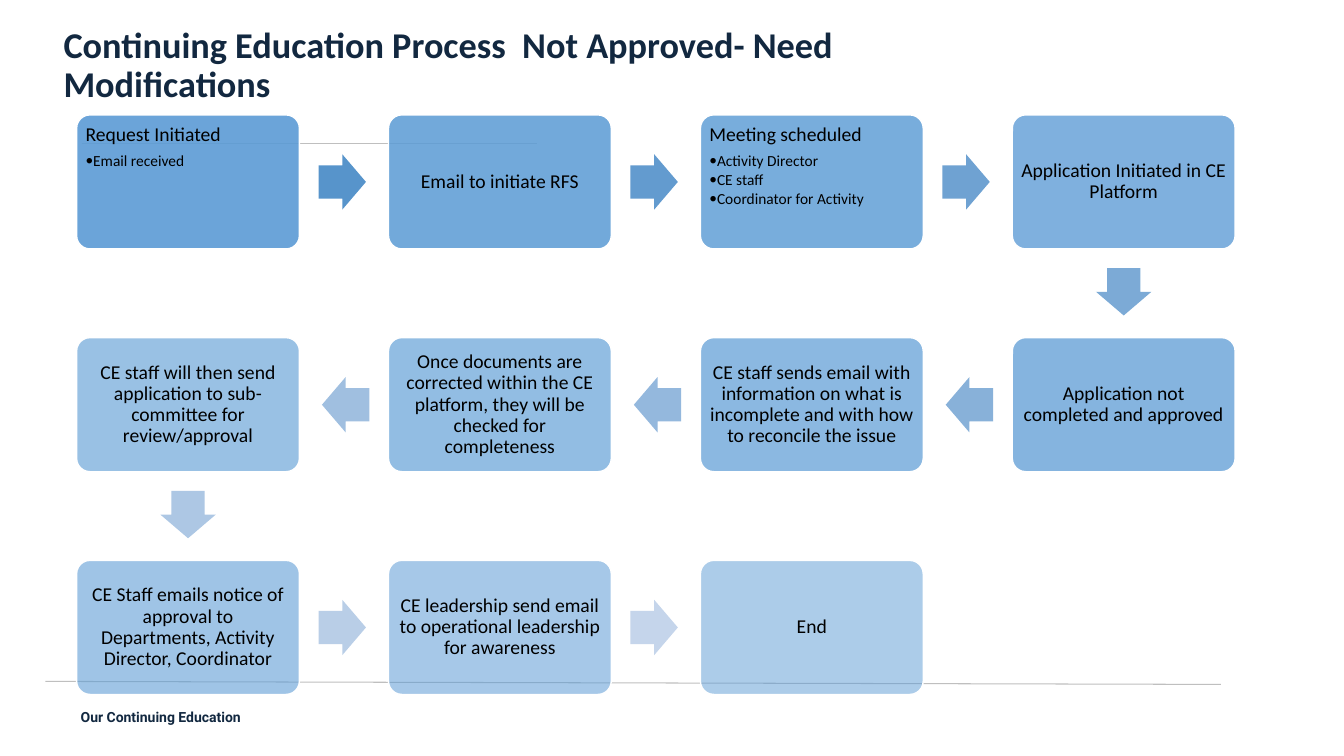
from lxml import etree
from pptx import Presentation
from pptx.dml.color import RGBColor
from pptx.enum.shapes import MSO_CONNECTOR, MSO_SHAPE
from pptx.enum.text import MSO_ANCHOR, MSO_AUTO_SIZE, PP_ALIGN
from pptx.oxml.ns import qn
from pptx.util import Inches, Pt

ROUND_BOX = MSO_SHAPE.ROUNDED_RECTANGLE
ARROW = MSO_SHAPE.RIGHT_ARROW
STRAIGHT = MSO_CONNECTOR.STRAIGHT
TOP, MIDDLE = MSO_ANCHOR.TOP, MSO_ANCHOR.MIDDLE
LEFT, CENTER = PP_ALIGN.LEFT, PP_ALIGN.CENTER
NO_FIT = MSO_AUTO_SIZE.NONE

NAVY, GREY, BLUE = "122840", "BFBFBF", "5B9BD5"
ARROW_FIRST, ARROW_LAST = "5794CB", "C5D5EB"
COLS, ROWS = 4, 3
BOX_W, BOX_H = 2.21, 1.33
ARROW_W, ARROW_H = 0.47, 0.55

STEPS = [
    ("Request Initiated", ["Email received"]),
    ("Email to initiate RFS", []),
    ("Meeting scheduled",
     ["Activity Director", "CE staff", "Coordinator for Activity"]),
    ("Application Initiated in CE Platform", []),
    ("Application not completed and approved", []),
    ("CE staff sends email with information on what is incomplete "
     "and with how to reconcile the issue", []),
    ("Once documents are corrected within the CE platform, "
     "they will be checked for completeness", []),
    ("CE staff will then send application to sub-committee "
     "for review/approval", []),
    ("CE Staff emails notice of approval to Departments, "
     "Activity Director, Coordinator", []),
    ("CE leadership send email to operational leadership for awareness", []),
    ("End", []),
]


def rgb(value):
    return RGBColor.from_string(value)


def blend(first, last, share):
    pairs = zip(rgb(first), rgb(last))
    return "".join(f"{round(a + (b - a) * share):02X}" for a, b in pairs)


def add_run(p, text, size, font="Calibri", color="000000", bold=False):
    r = p.add_run()
    r.text = text
    r.font.size, r.font.name, r.font.bold = Pt(size), font, bold
    r.font.color.rgb = rgb(color)


def set_bullet(p, char=None, indent=0):
    pPr = p._p.get_or_add_pPr()
    pPr.set("marL", str(Inches(indent)))
    pPr.set("indent", str(-Inches(indent)))
    if char:
        etree.SubElement(pPr, qn("a:buFont")).set("typeface", "Calibri")
        etree.SubElement(pPr, qn("a:buChar")).set("char", char)
    else:
        etree.SubElement(pPr, qn("a:buNone"))


def fill_placeholder(sp, box, text, size, font):
    sp.left, sp.top, sp.width, sp.height = map(Inches, box)
    tf = sp.text_frame
    tf.word_wrap, tf.auto_size, tf.vertical_anchor = True, NO_FIT, TOP
    p = tf.paragraphs[0]
    set_bullet(p)
    p.alignment, p.line_spacing, p.space_before = LEFT, 0.9, Pt(0)
    add_run(p, text, size, font, NAVY, True)


def add_rule(slide, x1, y1, x2, y2, width):
    line = slide.shapes.add_connector(
        STRAIGHT, *map(Inches, (x1, y1, x2, y2)))
    line.line.color.rgb = rgb(GREY)
    line.line.width = Pt(width)
    etree.SubElement(line._element.spPr, qn("a:effectLst"))


def add_preset(slide, kind, box, color):
    sp = slide.shapes.add_shape(kind, *map(Inches, box))
    sp.shadow.inherit = False
    sp.fill.solid()
    sp.fill.fore_color.rgb = rgb(color)
    return sp


def add_step(slide, box, heading, points, opacity):
    sp = add_preset(slide, ROUND_BOX, box, BLUE)
    sp.adjustments[0] = 0.1
    sp.line.color.rgb = rgb("FFFFFF")
    sp.line.width = Pt(1)
    color = sp._element.spPr.find(qn("a:solidFill"))[0]
    etree.SubElement(color, qn("a:alpha")).set("val", str(opacity * 1000))
    tf = sp.text_frame
    tf.word_wrap = True
    tf.vertical_anchor = TOP if points else MIDDLE
    tf.margin_left = tf.margin_right = Inches(0.05)
    tf.margin_top = tf.margin_bottom = Inches(0.06)
    p = tf.paragraphs[0]
    p.alignment = LEFT if points else CENTER
    p.line_spacing, p.space_after = 0.9, Pt(4.9)
    add_run(p, heading, 14)
    for point in points:
        p = tf.add_paragraph()
        set_bullet(p, "•", 0.06)
        p.level, p.alignment = 1, LEFT
        p.line_spacing, p.space_after = 0.9, Pt(1.65)
        add_run(p, point, 11)


def add_arrow(slide, box, turn, color):
    x, y = box
    if turn == 90:
        x, y = x + (BOX_W - ARROW_W) / 2, y + 1.48
    else:
        x += 2.4 if turn == 0 else -0.66
        y += (BOX_H - ARROW_H) / 2
    sp = add_preset(slide, ARROW, (x, y, ARROW_W, ARROW_H), color)
    sp.adjustments[0], sp.adjustments[1] = 0.6, 0.5
    sp.line.fill.background()
    sp.rotation = turn


def add_process(slide, left, top, width, height):
    pitch_x = (width - BOX_W) / (COLS - 1)
    pitch_y = (height - BOX_H) / (ROWS - 1)
    last = len(STEPS) - 1
    for i, (heading, points) in enumerate(STEPS):
        row, place = divmod(i, COLS)
        backward = row % 2 == 1
        col = COLS - 1 - place if backward else place
        x, y = left + col * pitch_x, top + row * pitch_y
        add_step(slide, (x, y, BOX_W, BOX_H), heading, points, 90 - 4 * i)
        if i < last:
            turn = 90 if place == COLS - 1 else 180 if backward else 0
            color = blend(ARROW_FIRST, ARROW_LAST, i / (last - 1))
            add_arrow(slide, (x, y), turn, color)


def main():
    prs = Presentation()
    prs.slide_width, prs.slide_height = Inches(13.33), Inches(7.5)
    slide = prs.slides.add_slide(prs.slide_layouts[1])
    title, footer = slide.placeholders
    add_rule(slide, 0.45, 6.76, 12.11, 6.79, 0.75)
    add_rule(slide, 0.81, 1.42, 5.33, 1.42, 0.5)
    fill_placeholder(footer, (0.7, 7, 4.97, 0.29),
                     "Our Continuing Education", 10, "Roboto")
    fill_placeholder(
        title, (0.53, 0.22, 9.51, 0.55),
        "Continuing Education Process  Not Approved- Need Modifications",
        25.9, "Calibri")
    add_process(slide, 0.76, 1.14, 11.49, 5.75)
    prs.save("out.pptx")


if __name__ == "__main__":
    main()
